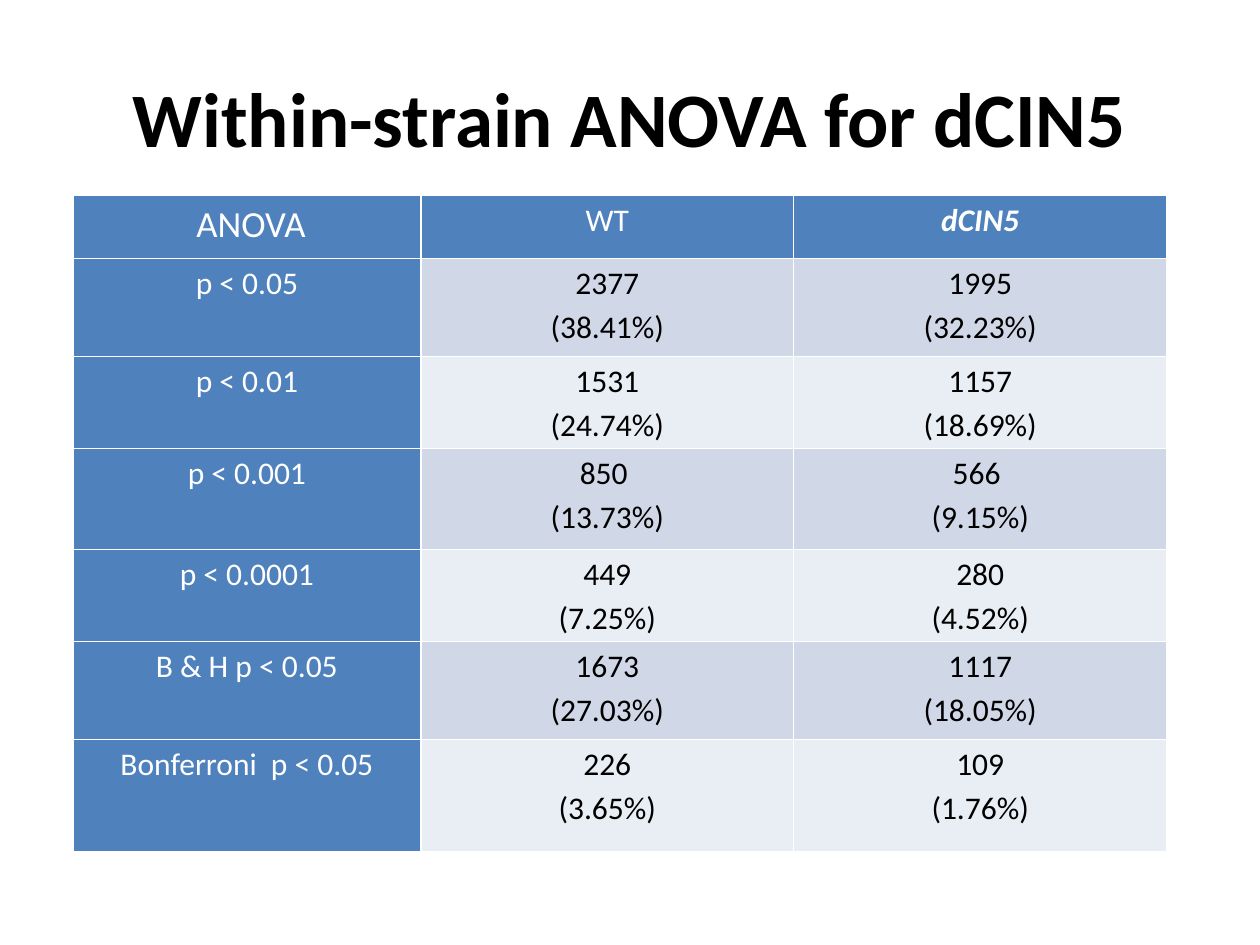
from lxml import etree
from pptx import Presentation
from pptx import util as u
from pptx.dml.color import RGBColor
from pptx.enum import text
from pptx.oxml import ns

TITLE = "Within-strain ANOVA for dCIN5"
HEADER = [" ANOVA", "WT", "dCIN5"]
RESULTS = [
    ("p < 0.05", "2377\n(38.41%)", "1995\n(32.23%)"),
    ("p < 0.01", "1531\n(24.74%)", "1157\n(18.69%)"),
    ("p < 0.001", "850 \n(13.73%)", "566 \n(9.15%)"),
    ("p < 0.0001", "449\n(7.25%)", "280\n(4.52%)"),
    ("B & H p < 0.05", "1673\n(27.03%)", "1117\n(18.05%)"),
    ("Bonferroni  p < 0.05", "226\n(3.65%)", "109\n(1.76%)"),
]
COLUMN_WIDTHS = [2.76, 2.96, 2.96]
ROW_HEIGHTS = [0.5, 0.78, 0.73, 0.8, 0.73, 0.78, 0.89]

FONT = "Calibri"
BLACK = RGBColor(0x00, 0x00, 0x00)
WHITE = RGBColor(0xFF, 0xFF, 0xFF)
BLUE = RGBColor(0x4F, 0x81, 0xBD)
BANDS = [RGBColor(0xE9, 0xED, 0xF4), RGBColor(0xD0, 0xD8, 0xE8)]


def write_text(frame, content, size=18, color=BLACK, bold=False, italic=False, spacing=None):
    frame.text = content
    for paragraph in frame.paragraphs:
        paragraph.alignment = text.PP_ALIGN.CENTER
        paragraph.line_spacing = spacing
        for run in paragraph.runs:
            font = run.font
            font.name, font.size = FONT, u.Pt(size)
            font.bold, font.italic = bold, italic
            font.color.rgb = color


def add_borders(cell, color=WHITE, width=1):
    properties = cell._tc.get_or_add_tcPr()
    for side in ("lnL", "lnR", "lnT", "lnB"):
        line = etree.SubElement(properties, ns.qn(f"a:{side}"), w=str(u.Pt(width)))
        fill = etree.SubElement(line, ns.qn("a:solidFill"))
        etree.SubElement(fill, ns.qn("a:srgbClr"), val=str(color))


def format_cell(cell, row, column, content):
    is_header = row == 0
    is_label = is_header or column == 0
    is_strain = is_header and column == 2
    cell.margin_left = cell.margin_right = u.Inches(0.07)
    cell.margin_top = cell.margin_bottom = 0
    add_borders(cell)
    cell.fill.solid()
    cell.fill.fore_color.rgb = BLUE if is_label else BANDS[row % 2]
    write_text(
        cell.text_frame,
        content,
        size=21 if is_header and column == 0 else 18,
        color=WHITE if is_label else BLACK,
        bold=is_strain,
        italic=is_strain,
        spacing=1.15,
    )


def main():
    presentation = Presentation()
    presentation.slide_width, presentation.slide_height = u.Inches(10), u.Inches(7.5)
    slide = presentation.slides.add_slide(presentation.slide_layouts[5])

    title = slide.shapes.title
    title.left, title.top = u.Inches(0.5), u.Inches(0.3)
    title.width, title.height = u.Inches(9), u.Inches(1.25)
    write_text(title.text_frame, TITLE, size=44, bold=True)

    rows = [HEADER, *RESULTS]
    table = slide.shapes.add_table(
        len(rows), len(HEADER), u.Inches(0.58), u.Inches(1.55),
        u.Inches(sum(COLUMN_WIDTHS)), u.Inches(sum(ROW_HEIGHTS)),
    ).table
    for column, width in zip(table.columns, COLUMN_WIDTHS):
        column.width = u.Inches(width)
    for row, height in zip(table.rows, ROW_HEIGHTS):
        row.height = u.Inches(height)
    for row, contents in enumerate(rows):
        for column, content in enumerate(contents):
            format_cell(table.cell(row, column), row, column, content)

    presentation.save("out.pptx")


if __name__ == "__main__":
    main()
